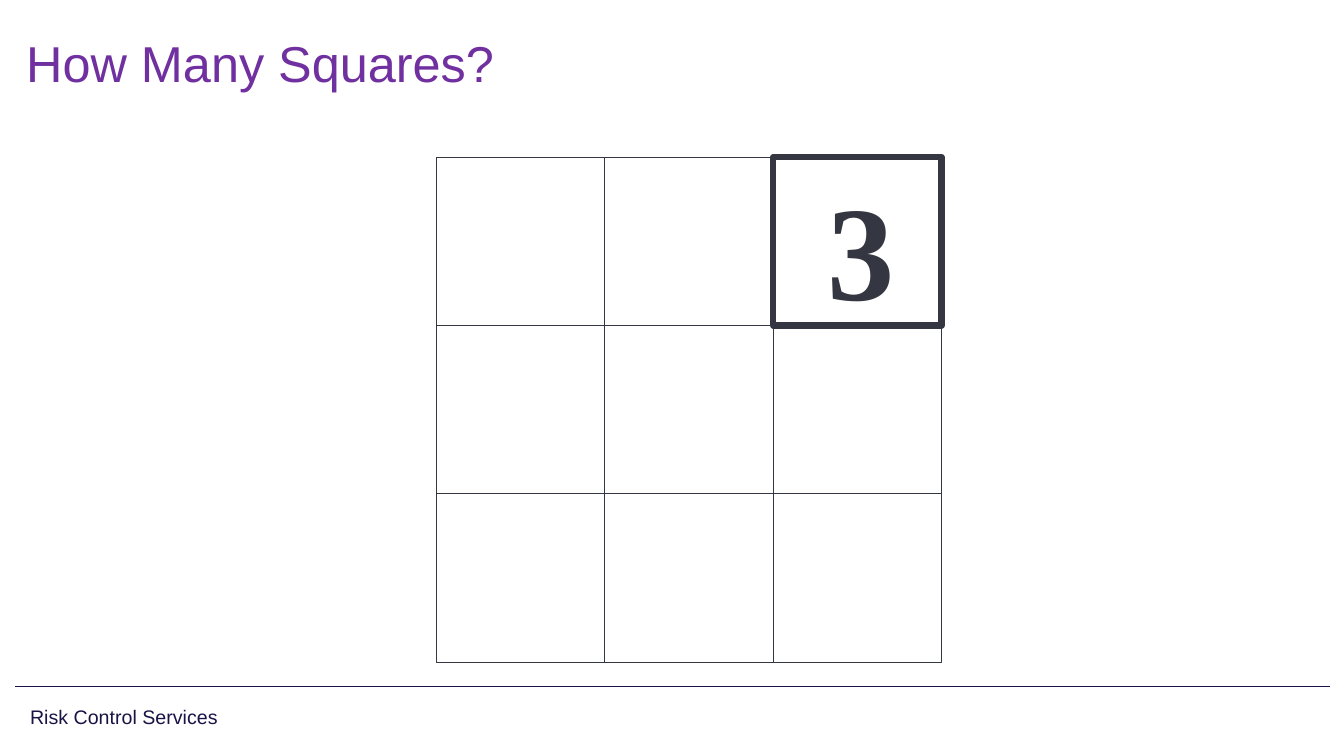
from lxml import etree
from pptx import Presentation
from pptx.dml.color import RGBColor
from pptx.enum import shapes, text
from pptx.oxml.ns import qn
from pptx.util import Inches, Pt

TITLE = "How Many Squares?"
FOOTER = "Risk Control Services"
NUMBER = "3"
COLORS = {"title": "7030A0", "footer": "1A1446", "grid": "343741"}

GRID_SIZE = 3
GRID_LEFT, GRID_TOP = 4.33, 1.56
SIDE = 1.67
HIGHLIGHTED = (0, 2)  # row, column
THIN, THICK = 0.75, 4.5


def color(name):
    return RGBColor.from_string(COLORS[name])


def write(sp, words, font, size, color_name, anchor, bold=False):
    tf = sp.text_frame
    tf.word_wrap = True
    tf.auto_size = text.MSO_AUTO_SIZE.NONE
    tf.vertical_anchor = anchor
    p = tf.paragraphs[0]
    r = p.add_run()
    r.text = words
    r.font.name = font
    r.font.size = Pt(size)
    r.font.bold = bold
    r.font.color.rgb = color(color_name)
    return p


def add_text_box(slide, left, top, width, height):
    return slide.shapes.add_textbox(
        Inches(left), Inches(top), Inches(width), Inches(height))


def add_footer(slide):
    sp = add_text_box(slide, 0.2, 6.91, 4.37, 0.42)
    p = write(sp, FOOTER, "Arial", 14, "footer", text.MSO_ANCHOR.MIDDLE)
    p.line_spacing = 0.9
    rule = slide.shapes.add_connector(
        shapes.MSO_CONNECTOR.STRAIGHT,
        Inches(0.15), Inches(6.81), Inches(13.19), Inches(6.81))
    rule.line.color.rgb = color("footer")
    rule.line.width = Pt(1)
    etree.SubElement(rule._element.spPr, qn("a:effectLst"))


def add_grid(slide):
    for row in range(GRID_SIZE):
        for col in range(GRID_SIZE):
            square = slide.shapes.add_shape(
                shapes.MSO_SHAPE.RECTANGLE,
                Inches(GRID_LEFT + col * SIDE), Inches(GRID_TOP + row * SIDE),
                Inches(SIDE), Inches(SIDE))
            square.shadow.inherit = False
            square.fill.background()
            square.line.color.rgb = color("grid")
            square.line.width = Pt(THICK if (row, col) == HIGHLIGHTED else THIN)


def add_number(slide):
    sp = add_text_box(slide, 7.75, 1.58, 1.58, 1.7)
    sp.text_frame.margin_bottom = Inches(0.03)
    p = write(sp, NUMBER, "Times New Roman", 96, "grid",
              text.MSO_ANCHOR.BOTTOM, bold=True)
    p.alignment = text.PP_ALIGN.CENTER


def add_title(slide):
    sp = slide.shapes.title
    sp.left, sp.top = Inches(0.16), Inches(0.25)
    sp.width, sp.height = Inches(11.26), Inches(0.82)
    p = write(sp, TITLE, "Arial", 36, "title", text.MSO_ANCHOR.MIDDLE)
    p.alignment = text.PP_ALIGN.LEFT
    p.line_spacing = 0.9


def main():
    prs = Presentation()
    prs.slide_width, prs.slide_height = Inches(13.33), Inches(7.5)
    slide = prs.slides.add_slide(prs.slide_layouts[5])
    add_footer(slide)
    add_grid(slide)
    add_number(slide)
    add_title(slide)
    prs.save("out.pptx")


if __name__ == "__main__":
    main()
